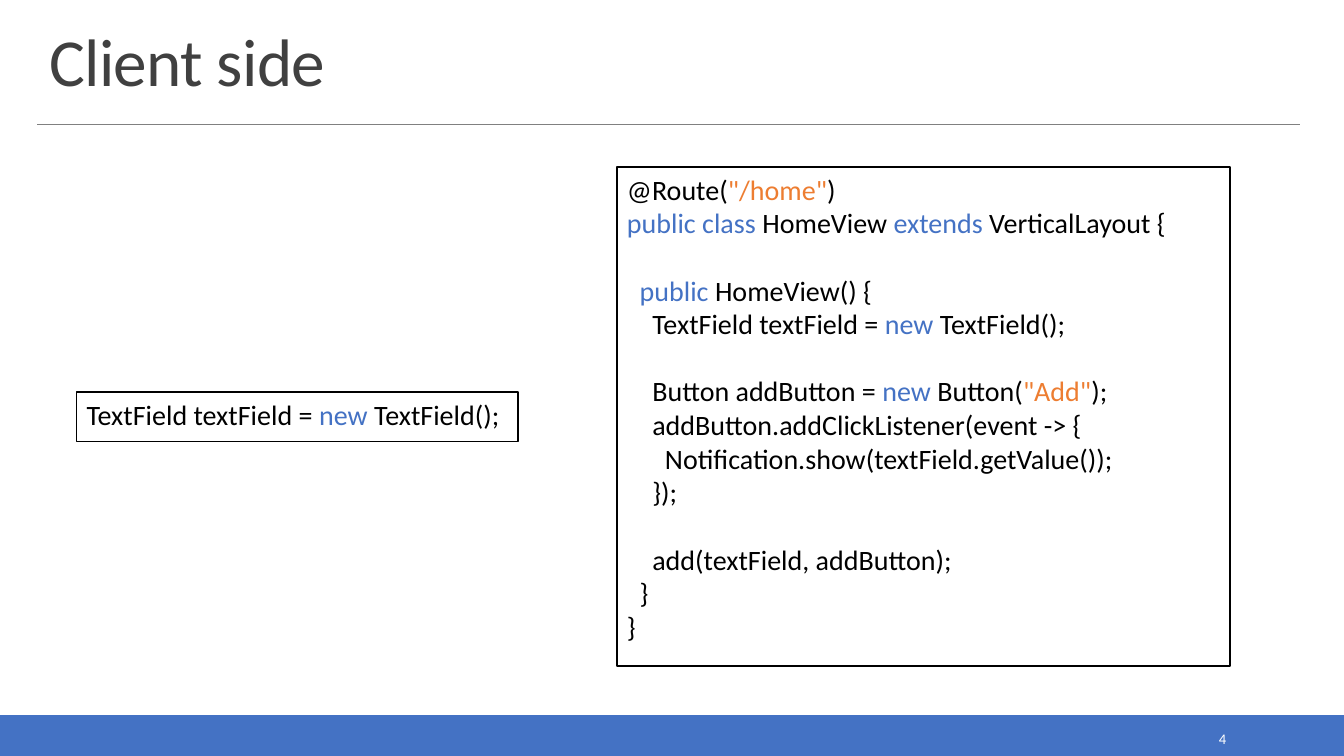
from dataclasses import dataclass

from pptx import Presentation
from pptx import util as u
from pptx.dml.color import RGBColor
from pptx.enum import shapes, text
from pptx.oxml.ns import qn


@dataclass(frozen=True)
class Theme:
    """Colours, font and type sizes of the slide."""
    font: str = "Calibri"
    white: str = "FFFFFF"
    black: str = "000000"
    heading: str = "404040"
    rule: str = "808080"
    keyword: str = "4472C4"
    string: str = "ED7D31"
    bar: str = "4472C4"
    title_size: float = 48
    code_size: float = 20
    code_pitch: float = 24
    number_size: float = 10.5


T = Theme()
C, K, S = T.black, T.keyword, T.string

DECLARATION = [(C, "TextField textField = "), (K, "new "), (C, "TextField();")]
SNIPPET = [DECLARATION]
HOME_VIEW = [
    [(C, "@Route("), (S, '"/home"'), (C, ")")],
    [(K, "public class "), (C, "HomeView "), (K, "extends "), (C, "VerticalLayout {")],
    [],
    [(C, "  "), (K, "public "), (C, "HomeView() {")],
    [(C, "    "), *DECLARATION],
    [],
    [(C, "    Button addButton = "), (K, "new"), (C, " Button("), (S, '"Add"'), (C, ");")],
    [(C, "    addButton.addClickListener(event -> {")],
    [(C, "      Notification.show(textField.getValue());")],
    [(C, "    });")],
    [],
    [(C, "    add(textField, addButton);")],
    [(C, "  }")],
    [(C, "}")],
]


def rgb(colour):
    """Turn a hex string into a colour."""
    return RGBColor.from_string(colour)


def style(r, size, colour):
    """Set the font of a run."""
    r.font.name = T.font
    r.font.size = u.Pt(size)
    r.font.color.rgb = rgb(colour)


def add_box(s, box, fill, line):
    """Add a filled and outlined rectangle."""
    sp = s.shapes.add_shape(shapes.MSO_SHAPE.RECTANGLE, *map(u.Inches, box))
    sp.shadow.inherit = False
    sp.fill.solid()
    sp.fill.fore_color.rgb = rgb(fill)
    sp.line.color.rgb = rgb(line)
    sp.line.width = u.Pt(1.25)
    return sp


def add_header(s, box):
    """Place the title in the box and a rule below it."""
    x, y, w, h = box
    title = s.shapes.title
    title.left, title.top, title.width, title.height = map(u.Inches, box)
    tf = title.text_frame
    tf.text = "Client side"
    tf.vertical_anchor = text.MSO_ANCHOR.BOTTOM
    p = tf.paragraphs[0]
    p.alignment = text.PP_ALIGN.LEFT
    p.line_spacing = 0.85
    style(p.runs[0], T.title_size, T.heading)
    p.runs[0].font._element.set("spc", "-50")

    rule_y = u.Inches(y + h + 0.19)
    rule = s.shapes.add_connector(shapes.MSO_CONNECTOR.STRAIGHT, u.Inches(x - 0.02),
                                  rule_y, u.Inches(x + w - 0.02), rule_y)
    rule.line.color.rgb = rgb(T.rule)
    rule.line.width = u.Pt(0.5)
    sp_pr = rule._element.spPr
    sp_pr.append(sp_pr.makeelement(qn("a:effectLst"), {}))


def add_footer(s, box):
    """Place the bottom bar with the slide number."""
    x, y, w, h = box
    add_box(s, box, T.bar, T.bar)
    number = s.shapes.add_textbox(*map(u.Inches, (x + 10.83, y + 0.09, 1.43, 0.28)))
    tf = number.text_frame
    tf.word_wrap = True
    tf.text = "4"
    tf.vertical_anchor = text.MSO_ANCHOR.MIDDLE
    p = tf.paragraphs[0]
    p.alignment = text.PP_ALIGN.RIGHT
    style(p.runs[0], T.number_size, T.white)


def add_code(s, box, lines):
    """Place a framed listing; an empty line becomes space before the next."""
    tf = add_box(s, box, T.white, T.black).text_frame
    tf.word_wrap = True
    tf.vertical_anchor = text.MSO_ANCHOR.TOP
    p, gap = tf.paragraphs[0], 0
    for i, line in enumerate(lines):
        if not line:
            gap += T.code_pitch
            continue
        if i:
            p = tf.add_paragraph()
        p.alignment = text.PP_ALIGN.LEFT
        p.line_spacing = u.Pt(T.code_pitch)
        p.space_before = u.Pt(gap)
        gap = 0
        for colour, token in line:
            r = p.add_run()
            r.text = token
            style(r, T.code_size, colour)


def main():
    """Build and save the slide."""
    prs = Presentation()
    prs.slide_width, prs.slide_height = u.Inches(13.33), u.Inches(7.5)
    s = prs.slides.add_slide(prs.slide_layouts[5])
    add_footer(s, (0, 7.1, 13.33, 0.4))
    add_header(s, (0.39, 0.2, 12.52, 0.84))
    add_code(s, (0.76, 3.89, 4.38, 0.49), SNIPPET)
    add_code(s, (6.12, 1.66, 6.08, 4.95), HOME_VIEW)
    prs.save("out.pptx")


if __name__ == "__main__":
    main()
